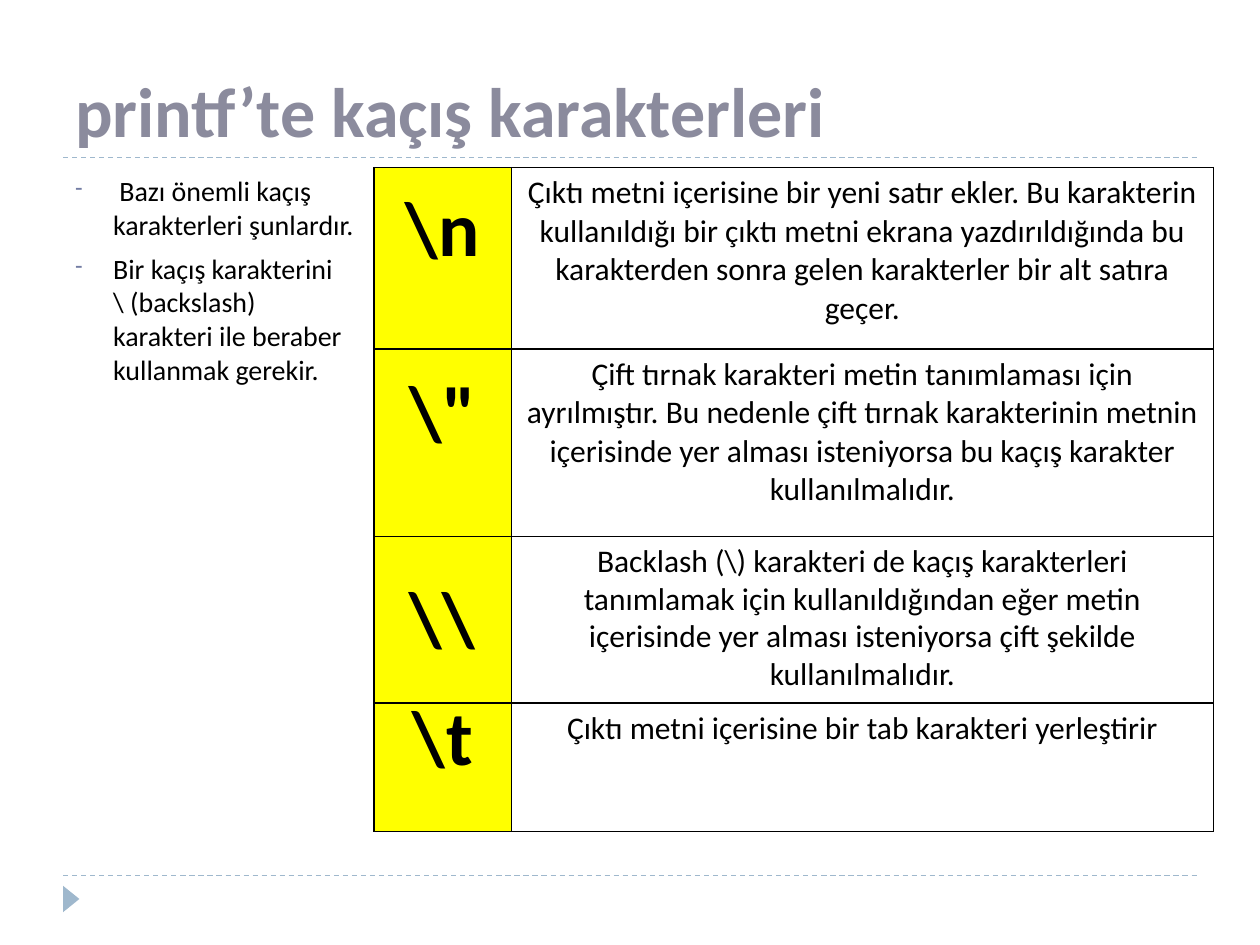
"""Build a slide on printf escape characters with a two-column table."""
from lxml import etree
from pptx import Presentation
from pptx import util as u
from pptx.dml.color import RGBColor
from pptx.enum import dml, shapes, text
from pptx.oxml.ns import qn

TITLE = "printf’te kaçış karakterleri"
BULLETS = [
    " Bazı önemli kaçış karakterleri şunlardır.",
    "Bir kaçış karakterini\v\\ (backslash) karakteri ile beraber kullanmak gerekir.",
]
TIGHT = 21.6
ROWS = [
    (1.44, "\\n", TIGHT, "Çıktı metni içerisine bir yeni satır ekler. Bu karakterin kullanıldığı "
     "bir çıktı metni ekrana yazdırıldığında bu karakterden sonra gelen karakterler bir alt "
     "satıra geçer.", None),
    (1.49, "\\\"", TIGHT, "Çift tırnak karakteri metin tanımlaması için ayrılmıştır. Bu nedenle "
     "çift tırnak karakterinin metnin içerisinde yer alması isteniyorsa bu kaçış karakter "
     "kullanılmalıdır.", None),
    (1.32, "\\\\", None, "Backlash (\\) karakteri de kaçış karakterleri tanımlamak için "
     "kullanıldığından eğer metin içerisinde yer alması isteniyorsa çift şekilde "
     "kullanılmalıdır.", TIGHT),
    (1.02, "\\t", TIGHT, "Çıktı metni içerisine bir tab karakteri yerleştirir", None),
]
COLS = [1.09, 5.57]
RULES = [1.25, 6.95]
ACCENT = "9FB8CD"


def rgb(color):
    return RGBColor.from_string(color)


def sub(parent, tag, **attrs):
    return etree.SubElement(parent, qn(tag), attrs)


def write(p, words, size, color="000000", bold=False, align=None, spacing=None):
    p.text = words
    p.alignment = align
    if spacing:
        p.line_spacing = u.Pt(spacing)
    for r in p.runs:
        r.font.name = "Calibri"
        r.font.size = u.Pt(size)
        r.font.bold = bold
        r.font.color.rgb = rgb(color)


def add_text(s, x, y, w, h, anchor):
    tf = s.shapes.add_textbox(*map(u.Inches, (x, y, w, h))).text_frame
    tf.word_wrap = True
    tf.vertical_anchor = anchor
    return tf


def add_bullet(p):
    p.space_before = u.Pt(6)
    pPr = p._p.get_or_add_pPr()
    pPr.set("marL", str(u.Inches(0.3)))
    pPr.set("indent", str(-u.Inches(0.3)))
    sub(sub(pPr, "a:buClr"), "a:srgbClr", val="727CA3")
    sub(pPr, "a:buSzPct", val="76000")
    sub(pPr, "a:buChar", char="-")


def fill_cell(cell, words, fill, anchor, **fmt):
    cell.vertical_anchor = anchor
    write(cell.text_frame.paragraphs[0], words, align=text.PP_ALIGN.CENTER, **fmt)
    tcPr = cell._tc.get_or_add_tcPr()
    for side in ("a:lnL", "a:lnR", "a:lnT", "a:lnB"):
        ln = sub(tcPr, side, w=str(u.Pt(1)))
        sub(sub(ln, "a:solidFill"), "a:srgbClr", val="000000")
    cell.fill.solid()
    cell.fill.fore_color.rgb = rgb(fill)


def add_rule(s, y):
    line = s.shapes.add_connector(shapes.MSO_CONNECTOR.STRAIGHT,
                                  *map(u.Inches, (0.5, y, 9.5, y)))
    line.line.color.rgb = rgb(ACCENT)
    line.line.width = u.Pt(0.75)
    line.line.dash_style = dml.MSO_LINE.DASH
    sub(line._element.spPr, "a:effectLst")


def add_marker(s):
    sp = s.shapes.add_shape(shapes.MSO_SHAPE.ISOSCELES_TRIANGLE,
                            *map(u.Inches, (0.46, 7.07, 0.21, 0.13)))
    sp.rotation = 90
    sp.shadow.inherit = False
    sp.fill.solid()
    sp.fill.fore_color.rgb = rgb(ACCENT)
    sp.line.fill.background()


def add_escapes(s):
    heights = [row[0] for row in ROWS]
    size = map(u.Inches, (2.97, 1.33, sum(COLS), sum(heights)))
    table = s.shapes.add_table(len(ROWS), len(COLS), *size).table
    table.first_row = table.horz_banding = False
    for col, width in zip(table.columns, COLS):
        col.width = u.Inches(width)
    for i, (height, code, code_gap, meaning, gap) in enumerate(ROWS):
        table.rows[i].height = u.Inches(height)
        fill_cell(table.cell(i, 0), code, "FFFF00", text.MSO_ANCHOR.MIDDLE,
                  size=44, bold=True, spacing=code_gap)
        fill_cell(table.cell(i, 1), meaning, "FFFFFF", text.MSO_ANCHOR.TOP,
                  size=18, spacing=gap)


def main():
    prs = Presentation()
    prs.slide_width, prs.slide_height = u.Inches(10), u.Inches(7.5)
    s = prs.slides.add_slide(prs.slide_layouts[6])
    for y in RULES:
        add_rule(s, y)
    add_marker(s)
    tf = add_text(s, 0.5, 0.17, 9, 1.08, text.MSO_ANCHOR.BOTTOM)
    write(tf.paragraphs[0], TITLE, 40, "8B8B9D", bold=True)
    tf = add_text(s, 0.5, 1.33, 2.47, 5.4, text.MSO_ANCHOR.TOP)
    for i, words in enumerate(BULLETS):
        p = tf.add_paragraph() if i else tf.paragraphs[0]
        write(p, words, 16)
        add_bullet(p)
    add_escapes(s)
    prs.save("out.pptx")


if __name__ == "__main__":
    main()
